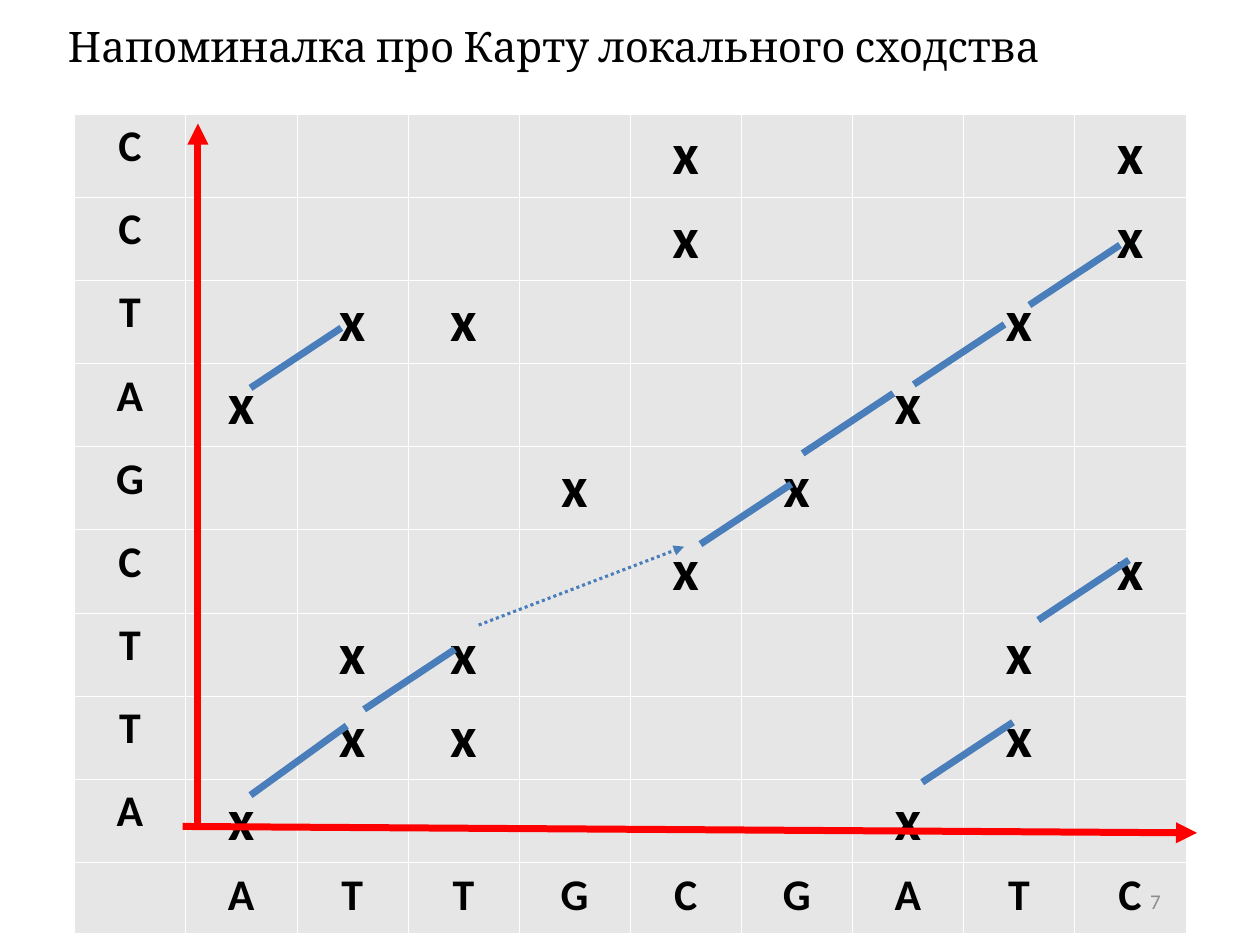
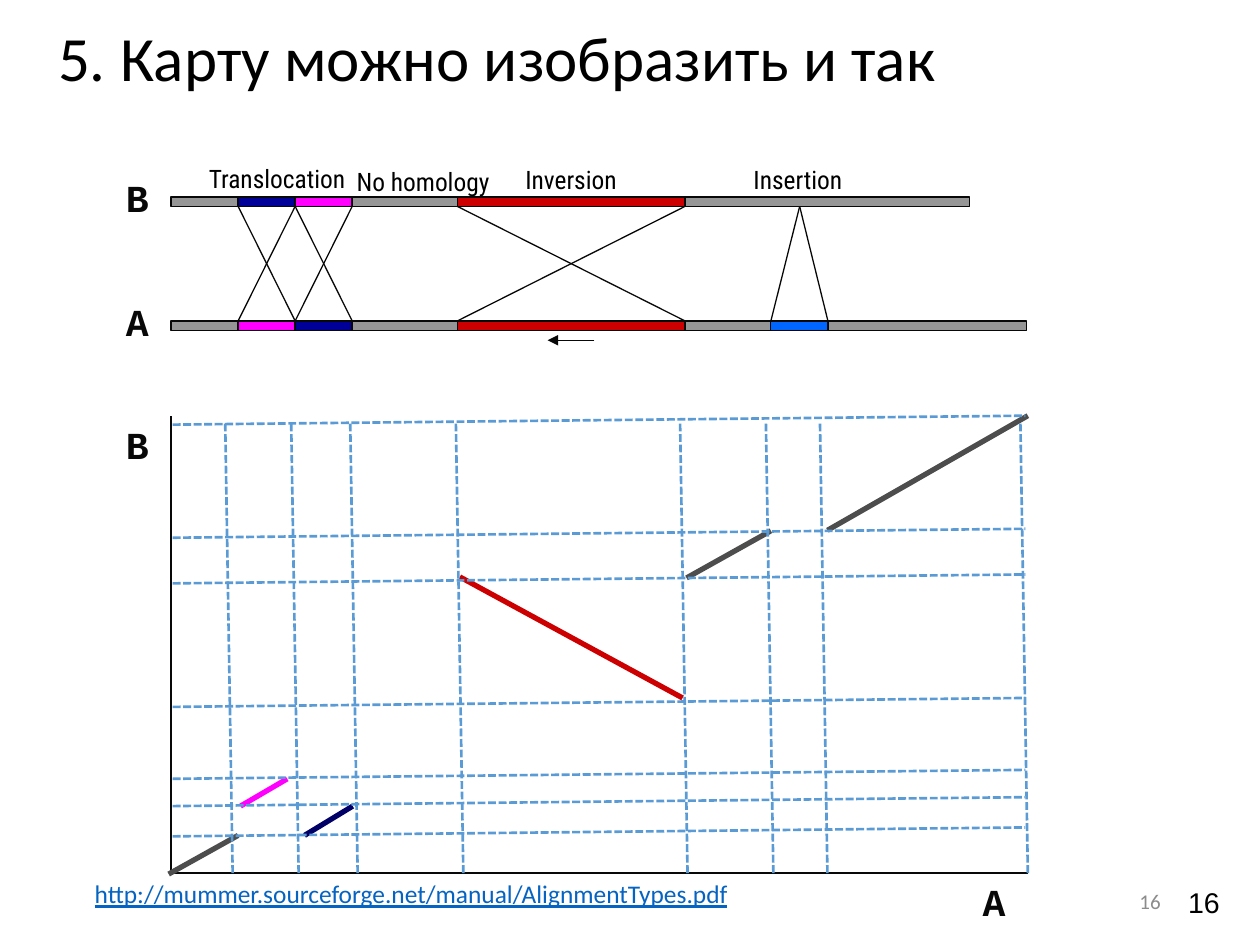
from lxml.etree import SubElement
from pptx import Presentation
from pptx.dml.color import RGBColor
from pptx.enum.dml import MSO_LINE_DASH_STYLE as Dash
from pptx.enum.shapes import MSO_CONNECTOR as Connector, MSO_SHAPE as Shape
from pptx.enum.text import MSO_ANCHOR as Anchor, MSO_AUTO_SIZE as AutoSize, PP_ALIGN as Align
from pptx.oxml.ns import qn
from pptx.util import Cm, Pt

BLACK, INK, WHITE, NUMBER_GREY = "000000", "080808", "FFFFFF", "8C8C8C"
CELL_GREY, AXIS_RED, MATCH_BLUE = "E6E6E6", "FF0000", "4A7EBB"
BAR_GREY, NAVY, MAGENTA, RED, BLUE = "969696", "000099", "FF00FF", "CC0000", "0066FF"
DARK_GREY, DEEP_NAVY, GRID_BLUE, LINK_BLUE = "4D4D4D", "000066", "5B9BD5", "0563C1"
INSETS = (0.23, 0.11, 0.23, 0.11)


def rgb(color):
    return RGBColor.from_string(color)


def write(frame, text, font="Calibri", size=18, color=BLACK, bold=False,
          underline=False, align=Align.LEFT):
    paragraph = frame.paragraphs[0]
    paragraph.alignment = align
    run = paragraph.add_run()
    run.text = text
    run.font.name = font
    run.font.size = Pt(size)
    run.font.bold = bold
    run.font.underline = underline
    run.font.color.rgb = rgb(color)


def set_frame(frame, insets=INSETS, anchor=Anchor.TOP, wrap=True):
    frame.auto_size = AutoSize.NONE
    frame.word_wrap = wrap
    frame.vertical_anchor = anchor
    frame.margin_left, frame.margin_top, frame.margin_right, frame.margin_bottom = map(Cm, insets)


def add_text(slide, text, box, insets=INSETS, anchor=Anchor.TOP, wrap=True, **style):
    frame = slide.shapes.add_textbox(*map(Cm, box)).text_frame
    set_frame(frame, insets, anchor, wrap)
    write(frame, text, **style)


def add_line(slide, origin, start, end, color=INK, width=0.75, dash=None, arrow=False):
    """Draw a line between two points given relative to origin."""
    left, top = origin
    line = slide.shapes.add_connector(
        Connector.STRAIGHT, Cm(left + start[0]), Cm(top + start[1]),
        Cm(left + end[0]), Cm(top + end[1]))
    line.line.color.rgb = rgb(color)
    line.line.width = Pt(width)
    if dash:
        line.line.dash_style = dash
    if arrow:
        SubElement(line.line._get_or_add_ln(), qn("a:tailEnd"), type="triangle")
    SubElement(line._element.spPr, qn("a:effectLst"))


def add_titled_slide(presentation, title, box, number, insets=INSETS, **style):
    slide = presentation.slides.add_slide(presentation.slide_layouts[5])
    shape = slide.shapes.title
    shape.left, shape.top, shape.width, shape.height = map(Cm, box)
    set_frame(shape.text_frame, insets, Anchor.MIDDLE)
    write(shape.text_frame, title, **style)
    add_text(slide, number, (17.93, 17.65, 5.72, 1.02), insets=(0.25, 0.13, 0.25, 0.13),
             anchor=Anchor.MIDDLE, size=12, color=NUMBER_GREY, align=Align.RIGHT)
    return slide


def format_cell(cell, text, size):
    properties = cell._tc.get_or_add_tcPr()
    for side in ("lnL", "lnR", "lnT", "lnB"):
        border = SubElement(properties, qn(f"a:{side}"), w="762")
        fill = SubElement(border, qn("a:solidFill"))
        SubElement(fill, qn("a:srgbClr"), val=WHITE)
    cell.fill.solid()
    cell.fill.fore_color.rgb = rgb(CELL_GREY)
    if text:
        write(cell.text_frame, text, size=size, bold=True, align=Align.CENTER)


def add_match_table(slide, box, across, upward):
    """Cross every cell where the letters of both sequences agree."""
    letters = [*reversed(upward), ""]
    table = slide.shapes.add_table(len(letters), len(across) + 1, *map(Cm, box)).table
    for column in table.columns:
        column.width = Cm(2.24)
    for row_index, row_letter in enumerate(letters):
        table.rows[row_index].height = Cm(1.6 if row_letter else 1.42)
        format_cell(table.cell(row_index, 0), row_letter, 25)
        for column_index, letter in enumerate(across, 1):
            if row_letter:
                text, size = "x" if letter == row_letter else "", 33
            else:
                text, size = letter, 25
            format_cell(table.cell(row_index, column_index), text, size)


def add_similarity_map(slide, left, top):
    origin = (left, top)
    add_match_table(slide, (left, top, 22.4, 15.82), "ATTGCGATC", "ATTCGATCC")
    add_line(slide, origin, (3.55, 13.74), (5.49, 12.34), MATCH_BLUE, 4)
    run_starts = [(5.84, 12.01), (12.62, 8.68), (14.68, 6.85), (16.92, 5.46),
                  (19.25, 3.86), (3.55, 5.53), (17.09, 13.48), (19.43, 10.21)]
    for x, y in run_starts:
        add_line(slide, origin, (x, y), (x + 1.83, y - 1.21), MATCH_BLUE, 4)
    add_line(slide, origin, (2.18, 14.37), (22.63, 14.5), AXIS_RED, 4, arrow=True)
    add_line(slide, origin, (2.49, 14.3), (2.49, 0.2), AXIS_RED, 4, arrow=True)
    add_line(slide, origin, (8.15, 10.31), (12.29, 8.73), MATCH_BLUE, 1.75,
             dash=Dash.ROUND_DOT, arrow=True)


def add_letter(slide, letter, left, top):
    add_text(slide, letter, (left, top, 1.14, 1.14),
             font="Courier New", size=21.8, color=INK, bold=True)


def add_genome(slide, letter, left, top, blocks):
    add_letter(slide, letter, left - 1.14, top - 0.57)
    for start, end, color in blocks:
        block = slide.shapes.add_shape(
            Shape.RECTANGLE, Cm(left + start), Cm(top), Cm(end - start), Cm(0.19))
        block.shadow.inherit = False
        block.fill.solid()
        block.fill.fore_color.rgb = rgb(color)
        block.line.color.rgb = rgb(INK)
        block.line.width = Pt(0.75)


def add_rearrangements(slide, left, top):
    """Two genomes, with lines that join their matching blocks."""
    origin = (left, top)
    gap = 2.5
    shared = [(0, 16.1, BAR_GREY), (5.77, 10.36, RED)]
    add_genome(slide, "B", left, top, shared + [(1.35, 2.5, NAVY), (2.5, 3.65, MAGENTA)])
    add_genome(slide, "A", left, top + gap, shared + [
        (1.35, 2.5, MAGENTA), (2.5, 3.65, NAVY),
        (12.09, 13.24, BLUE), (13.24, 17.25, BAR_GREY)])
    links = [(1.35, 2.5), (2.5, 1.35), (2.5, 3.65), (3.65, 2.5),
             (5.77, 10.36), (10.36, 5.77), (12.67, 12.09), (12.67, 13.24)]
    for upper, lower in links:
        add_line(slide, origin, (upper, 0.19), (lower, gap))
    add_line(slide, origin, (8.53, 2.89), (7.59, 2.89), arrow=True)
    captions = [("Translocation", 0.53, -0.8, 3.45), ("No homology", 3.51, -0.74, 3.2),
                ("Inversion", 6.91, -0.77, 2.49), ("Insertion", 11.51, -0.77, 2.49)]
    for text, x, y, width in captions:
        add_text(slide, text, (left + x, top + y, width, 0.84),
                 font="Roboto Condensed", size=14.5)


def add_dot_plot(slide, left, top, width, height):
    origin = (left, top)
    add_letter(slide, "B", left - 1.14, top)
    add_letter(slide, "A", left + 16.13, top + height)
    for end in ((width, height), (0, 0)):
        add_line(slide, origin, (0, height), end, width=1.5)
    segments = [((-0.05, 9.24), (1.35, 8.46), DARK_GREY),
                ((10.39, 3.27), (12.09, 2.32), DARK_GREY),
                ((13.23, 2.31), (17.27, 0), DARK_GREY),
                ((10.31, 5.69), (5.82, 3.25), RED),
                ((1.4, 7.87), (2.34, 7.32), MAGENTA),
                ((2.69, 8.46), (3.66, 7.87), DEEP_NAVY)]
    for start, end, color in segments:
        add_line(slide, origin, start, end, color, 3)
    rows = [((0.03, y), (width - 0.05, y - 0.18))
            for y in (8.48, 7.87, 7.32, 5.87, 3.38, 2.46, 0.18)]
    columns = [((x, height), (x - 0.15, 0.15))
               for x in (1.24, 2.57, 3.76, 5.89, 10.41, 12.14, 13.23, 17.27)]
    for start, end in rows + columns:
        add_line(slide, origin, start, end, GRID_BLUE, 1.5, dash=Dash.SQUARE_DOT)


def build_reminder_slide(presentation):
    slide = add_titled_slide(presentation, "Напоминалка про Карту локального сходства",
                             (1.14, 0.36, 22.83, 1.12), "7", font="Cambria", size=24)
    add_similarity_map(slide, 1.5, 2.29)
    # The page number lies over the table.
    number = slide.shapes[1]._element
    number.getparent().append(number)


def build_alignment_slide(presentation):
    slide = add_titled_slide(presentation, "5. Карту можно изобразить и так",
                             (1.17, 0.36, 22.83, 1.55), "16", insets=(0, 0, 0, 0), size=36)
    add_rearrangements(slide, 3.45, 3.97)
    add_dot_plot(slide, 3.45, 8.38, 17.27, 9.22)
    add_text(slide, "http://mummer.sourceforge.net/manual/AlignmentTypes.pdf",
             (1.68, 17.6, 15.8, 0.84), wrap=False, size=14.5, color=LINK_BLUE, underline=True)
    add_text(slide, "16", (23.72, 17.73, 1.37, 1.09), font="Arial", size=16.3)


def main():
    presentation = Presentation()
    presentation.slide_width, presentation.slide_height = Cm(25.4), Cm(19.05)
    build_reminder_slide(presentation)
    build_alignment_slide(presentation)
    presentation.save("out.pptx")


if __name__ == "__main__":
    main()
